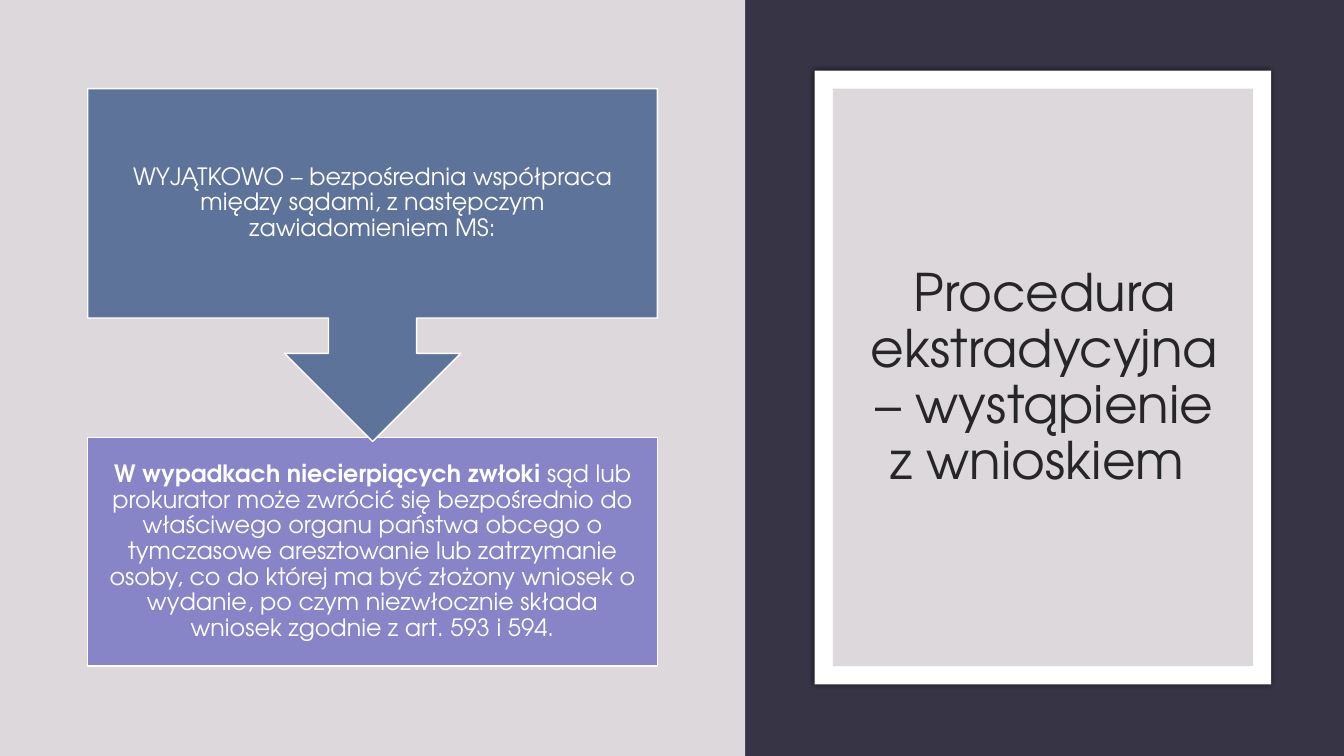
import pptx
import pptx.util
import pptx.dml.color
import pptx.enum.shapes
import pptx.enum.text
import pptx.oxml
import pptx.oxml.ns

PRESET = pptx.enum.shapes.MSO_SHAPE
COLORS = {
    "night": "373545",
    "mist": "DCD8DC",
    "white": "FFFFFF",
    "ink": "262626",
    "violet": "8784C7",
    "steel": "5D739A",
}


def color(name):
    return pptx.dml.color.RGBColor.from_string(COLORS[name])


def write(frame, *pieces, size, ink, inset=None, font="TeX Gyre Adventor"):
    frame.word_wrap = True
    frame.auto_size = pptx.enum.text.MSO_AUTO_SIZE.NONE
    frame.vertical_anchor = pptx.enum.text.MSO_ANCHOR.MIDDLE
    if inset is not None:
        margin = pptx.util.Inches(inset)
        frame.margin_left = frame.margin_right = margin
        frame.margin_top = frame.margin_bottom = margin
    paragraph = frame.paragraphs[0]
    paragraph.alignment = pptx.enum.text.PP_ALIGN.CENTER
    paragraph.line_spacing = 0.9
    for wording, bold in pieces:
        run = paragraph.add_run()
        run.text = wording
        run.font.name = font
        run.font.size = pptx.util.Pt(size)
        run.font.bold = bold
        run.font.color.rgb = color(ink)


class Board:
    def __init__(self, deck, background):
        self.width, self.height = deck.slide_width, deck.slide_height
        self.slide = deck.slides.add_slide(deck.slide_layouts[5])
        self.slide.background.fill.solid()
        self.slide.background.fill.fore_color.rgb = color(background)

    def place(self, left, top, width, height):
        return (
            round(left * self.width / 100),
            round(top * self.height / 100),
            round(width * self.width / 100),
            round(height * self.height / 100),
        )

    def panel(self, area, fill, outline=None, preset=PRESET.RECTANGLE, turn=0):
        panel = self.slide.shapes.add_shape(preset, *self.place(*area))
        panel.shadow.inherit = False
        panel.rotation = turn
        panel.fill.solid()
        panel.fill.fore_color.rgb = color(fill)
        if outline:
            panel.line.color.rgb = color(outline)
            panel.line.width = pptx.util.Pt(1)
        else:
            panel.line.fill.background()
        return panel

    def glow(self, panel, blur, opacity):
        effects = panel.element.spPr.find(pptx.oxml.ns.qn("a:effectLst"))
        effects.append(pptx.oxml.parse_xml(
            f'<a:outerShdw {pptx.oxml.ns.nsdecls("a")} blurRad="{pptx.util.Pt(blur)}" '
            'dist="0" dir="0" algn="ctr" rotWithShape="0"><a:srgbClr val="000000">'
            f'<a:alpha val="{opacity * 1000}"/></a:srgbClr></a:outerShdw>'
        ))

    def caption(self, area, *pieces):
        caption = self.slide.shapes.add_textbox(*self.place(*area))
        write(caption.text_frame, *pieces, size=17, ink="white", inset=0.13)

    def title(self, area, wording):
        title = self.slide.shapes.title
        self.slide.shapes.element.append(title.element)
        title.left, title.top, title.width, title.height = self.place(*area)
        write(title.text_frame, (wording, False), size=37, ink="ink")


def main():
    deck = pptx.Presentation()
    deck.slide_width = pptx.util.Inches(13.33)
    deck.slide_height = pptx.util.Inches(7.5)
    board = Board(deck, "mist")

    board.panel((0, 0, 100, 100), "night")
    board.panel((0, 0, 55.44, 100), "mist")

    left, top, width, height = 60.61, 9.33, 33.98, 81.2
    mat_x, mat_y = 1.35, 2.4
    frame = board.panel((left, top, width, height), "white")
    board.glow(frame, blur=4, opacity=66)
    board.panel((left + mat_x, top + mat_y, width - 2 * mat_x, height - 2 * mat_y), "mist")
    board.title((63.54, 17.33, 28.36, 65.47),
                "Procedura ekstradycyjna – wystąpienie z wnioskiem ")

    step_left, step_width, step_height = 6.53, 42.38, 30.27
    rule_top = top + mat_y
    urgent_top = top + height - mat_y - step_height
    urgent_area = (step_left, urgent_top, step_width, step_height)
    board.panel(urgent_area, "violet", "white")
    board.caption(
        urgent_area,
        ("W wypadkach niecierpiących zwłoki ", True),
        ("sąd lub prokurator może zwrócić się bezpośrednio do właściwego organu "
         "państwa obcego o tymczasowe aresztowanie lub zatrzymanie osoby, co do "
         "której ma być złożony wniosek o wydanie, po czym niezwłocznie składa "
         "wniosek zgodnie z art. 593 i 594.", False),
    )
    board.panel((step_left, rule_top, step_width, 46.67), "steel", "white",
                preset=PRESET.UP_ARROW_CALLOUT, turn=180)
    board.caption(
        (step_left, rule_top, step_width, step_height),
        ("WYJĄTKOWO – bezpośrednia współpraca między sądami, "
         "z następczym zawiadomieniem MS:", False),
    )
    deck.save("out.pptx")


if __name__ == "__main__":
    main()
